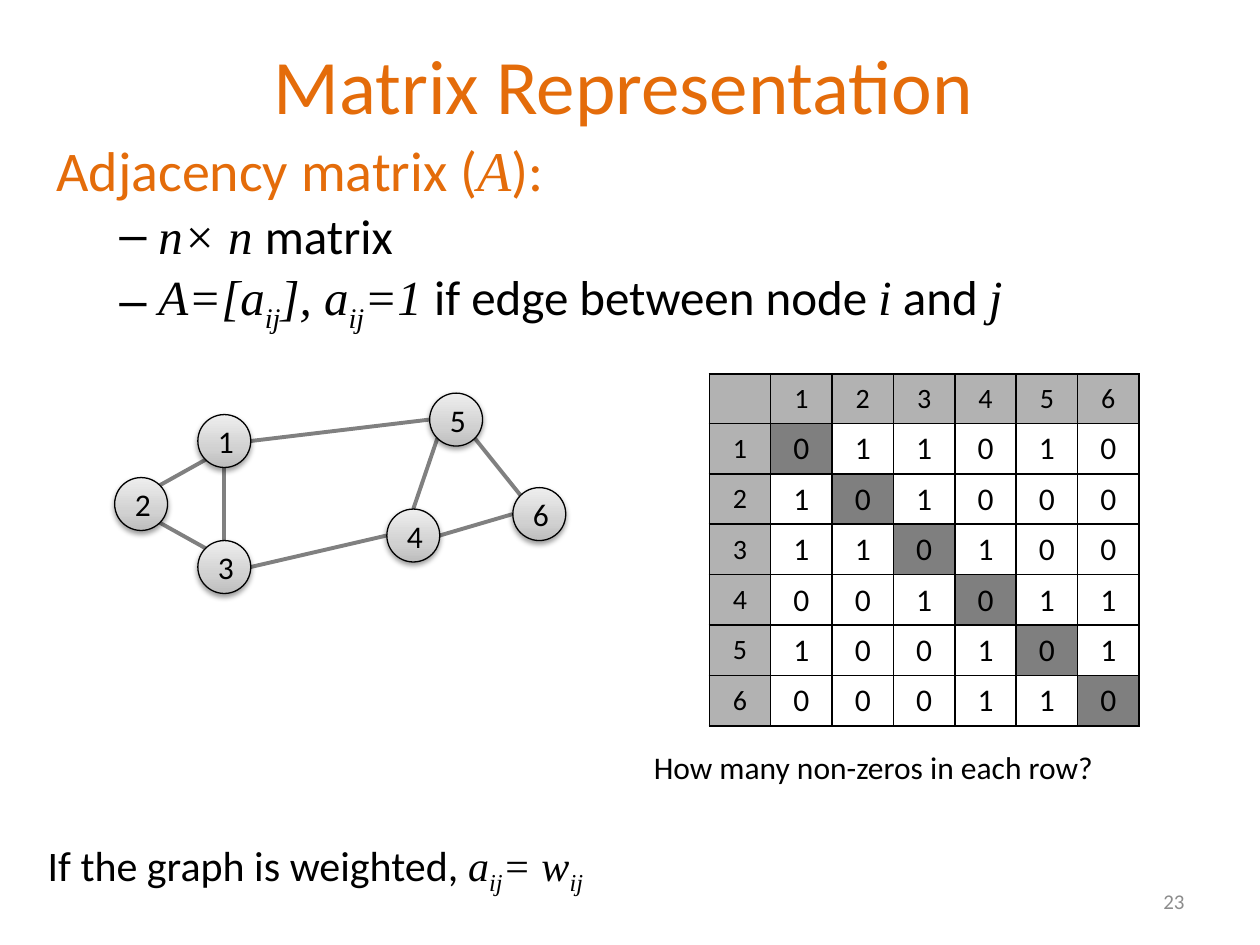
from math import cos, radians, sin

from lxml.etree import SubElement
from pptx import Presentation
from pptx.dml.color import RGBColor
from pptx.enum.shapes import MSO_CONNECTOR, MSO_SHAPE
from pptx.enum.text import MSO_ANCHOR, PP_ALIGN
from pptx.oxml.ns import qn
from pptx.util import Inches, Pt

SANS = "Calibri"
SERIF = "Times New Roman"
ORANGE = "E46C0A"
BLACK = "000000"
GRAY = "808080"
HEADER_GRAY = "B2B2B2"
RADIUS = 0.21
NODE_CENTERS = {
    1: (1.78, 3.5), 3: (1.78, 4.5), 2: (1.12, 4.0),
    5: (3.62, 3.33), 4: (3.28, 4.25), 6: (4.28, 4.08),
}
SITE_ANGLES = {
    "right": 0, "bottom right": 45, "bottom": 90, "bottom left": 135,
    "left": 180, "top left": 225, "top": 270, "top right": 315,
}
EDGES = [
    (1, "bottom left", 2, "top right"),
    (2, "bottom right", 3, "top left"),
    (1, "bottom", 3, "top"),
    (1, "right", 5, "left"),
    (3, "right", 4, "left"),
    (5, "bottom right", 6, "top left"),
    (4, "right", 6, "left"),
    (5, "bottom left", 4, "top"),
]
NODE_GRADIENT = [(0, "BDBDBD"), (35, "D1D1D1"), (100, "EEEEEE")]


def color(value):
    return RGBColor.from_string(value)


def add_xml(parent, tag, **attributes):
    return SubElement(parent, qn(tag), {key: str(value) for key, value in attributes.items()})


def format_paragraph(paragraph, size, hex_color=BLACK, align=PP_ALIGN.LEFT):
    paragraph.alignment = align
    paragraph.font.name = SANS
    paragraph.font.size = Pt(size)
    paragraph.font.color.rgb = color(hex_color)


def write_runs(paragraph, pieces):
    for text, style in pieces:
        run = paragraph.add_run()
        run.text = text
        if style != "plain":
            run.font.name = SERIF
            run.font.italic = True
        if style == "sub":
            run.font._element.set("baseline", "-25000")


def add_text(slide, box, pieces, size, hex_color=BLACK, align=PP_ALIGN.LEFT, anchor=MSO_ANCHOR.TOP):
    frame = slide.shapes.add_textbox(*map(Inches, box)).text_frame
    frame.word_wrap = True
    frame.vertical_anchor = anchor
    format_paragraph(frame.paragraphs[0], size, hex_color, align)
    write_runs(frame.paragraphs[0], pieces)
    return frame


def add_dash_item(frame, pieces):
    paragraph = frame.add_paragraph()
    paragraph.level = 1
    format_paragraph(paragraph, 28)
    paragraph.space_before = Pt(1.4)
    properties = paragraph._p.get_or_add_pPr()
    properties.set("marL", str(Inches(0.81)))
    properties.set("indent", str(Inches(-0.31)))
    bullet_font = add_xml(properties, "a:buFont", typeface="Arial")
    bullet = add_xml(properties, "a:buChar", char="–")
    default_font = properties.find(qn("a:defRPr"))
    default_font.addprevious(bullet_font)
    default_font.addprevious(bullet)
    write_runs(paragraph, pieces)


def site_point(node, site):
    x, y = NODE_CENTERS[node]
    angle = radians(SITE_ANGLES[site])
    return Inches(x + RADIUS * cos(angle)), Inches(y + RADIUS * sin(angle))


def add_edge(group, start, start_site, end, end_site):
    connector = group.shapes.add_connector(
        MSO_CONNECTOR.STRAIGHT, *site_point(start, start_site), *site_point(end, end_site))
    connector.line.color.rgb = color(GRAY)
    connector.line.width = Pt(2.25)
    add_xml(connector._element.spPr, "a:effectLst")


def add_node(group, label, center):
    x, y = center
    node = group.shapes.add_shape(
        MSO_SHAPE.OVAL, Inches(x - RADIUS), Inches(y - RADIUS), Inches(2 * RADIUS), Inches(2 * RADIUS))
    node.fill.gradient()
    node.fill.gradient_angle = 90
    properties = node._element.spPr
    stops = properties.find(qn("a:gradFill")).find(qn("a:gsLst"))
    stops.clear()
    for position, value in NODE_GRADIENT:
        add_xml(add_xml(stops, "a:gs", pos=position * 1000), "a:srgbClr", val=value)
    node.line.color.rgb = color(BLACK)
    node.line.width = Pt(0.75)
    node.shadow.inherit = False
    shadow = add_xml(
        properties.find(qn("a:effectLst")), "a:outerShdw",
        blurRad=Pt(3.1), dist=Pt(1.6), dir=90 * 60000, rotWithShape=0)
    add_xml(add_xml(shadow, "a:srgbClr", val=BLACK), "a:alpha", val=38000)
    frame = node.text_frame
    frame.vertical_anchor = MSO_ANCHOR.MIDDLE
    frame.text = str(label)
    format_paragraph(frame.paragraphs[0], 18, align=PP_ALIGN.CENTER)


def add_graph(slide):
    group = slide.shapes.add_group_shape()
    for edge in EDGES:
        add_edge(group, *edge)
    for label, center in NODE_CENTERS.items():
        add_node(group, label, center)


def add_borders(cell):
    properties = cell._tc.get_or_add_tcPr()
    for index, side in enumerate(("a:lnL", "a:lnR", "a:lnT", "a:lnB")):
        border = add_xml(properties, side, w=Pt(1))
        add_xml(add_xml(border, "a:solidFill"), "a:srgbClr", val=BLACK)
        properties.insert(index, border)


def fill_cell(cell, is_header, is_diagonal):
    if is_header:
        cell.fill.solid()
        cell.fill.fore_color.rgb = color(HEADER_GRAY)
    elif is_diagonal:
        cell.fill.solid()
        cell.fill.fore_color.rgb = color(BLACK)
        solid = cell._tc.tcPr.find(qn("a:solidFill"))
        add_xml(solid[0], "a:alpha", val=50000)
    else:
        cell.fill.background()


def add_matrix(slide):
    pairs = {frozenset((start, end)) for start, _, end, _ in EDGES}
    count = len(NODE_CENTERS) + 1
    table = slide.shapes.add_table(
        count, count, Inches(5.63), Inches(2.97), Inches(3.41), Inches(0.39 * count)).table
    table.first_row = False
    table.horz_banding = False
    for row in range(count):
        for column in range(count):
            cell = table.cell(row, column)
            is_header = row == 0 or column == 0
            if is_header:
                cell.text = str(row or column or "")
            else:
                cell.text = str(int(frozenset((row, column)) in pairs))
            format_paragraph(cell.text_frame.paragraphs[0], 16 if is_header else 18, align=PP_ALIGN.CENTER)
            cell.vertical_anchor = MSO_ANCHOR.MIDDLE
            cell.margin_left = cell.margin_right = Inches(0.08 if is_header else 0.1)
            fill_cell(cell, is_header, row == column)
            add_borders(cell)


def add_title(slide, text):
    title = slide.shapes.title
    title.left, title.top, title.width, title.height = map(Inches, (0.45, 0.04, 9, 1.25))
    title.text_frame.text = text
    title.text_frame.vertical_anchor = MSO_ANCHOR.MIDDLE
    format_paragraph(title.text_frame.paragraphs[0], 44, ORANGE, PP_ALIGN.CENTER)


def main():
    presentation = Presentation()
    presentation.slide_width, presentation.slide_height = Inches(10), Inches(7.5)
    slide = presentation.slides.add_slide(presentation.slide_layouts[5])
    add_title(slide, "Matrix Representation")
    body = add_text(
        slide, (0.35, 1.03, 9, 4.95),
        [("Adjacency matrix (", "plain"), ("A", "math"), ("):", "plain")], 32, ORANGE)
    body.paragraphs[0].space_before = Pt(6.4)
    add_dash_item(body, [("n× n ", "math"), ("matrix", "plain")])
    add_dash_item(body, [
        ("A=[a", "math"), ("ij", "sub"), ("], a", "math"), ("ij", "sub"), ("=1 ", "math"),
        ("if edge between node ", "plain"), ("i", "math"), (" and ", "plain"), ("j", "math")])
    add_text(slide, (7.17, 6.95, 2.33, 0.4), [("23", "plain")], 12, "8C8C8C", PP_ALIGN.RIGHT, MSO_ANCHOR.MIDDLE)
    add_graph(slide)
    add_matrix(slide)
    add_text(slide, (0.28, 6.61, 7.32, 0.5), [
        ("If the graph is weighted, ", "plain"), ("a", "math"), ("ij", "sub"), ("= w", "math"), ("ij", "sub")], 24)
    add_text(slide, (5.09, 5.89, 4.41, 0.4), [("How many non-zeros in each row?", "plain")], 18)
    presentation.save("out.pptx")


main()
